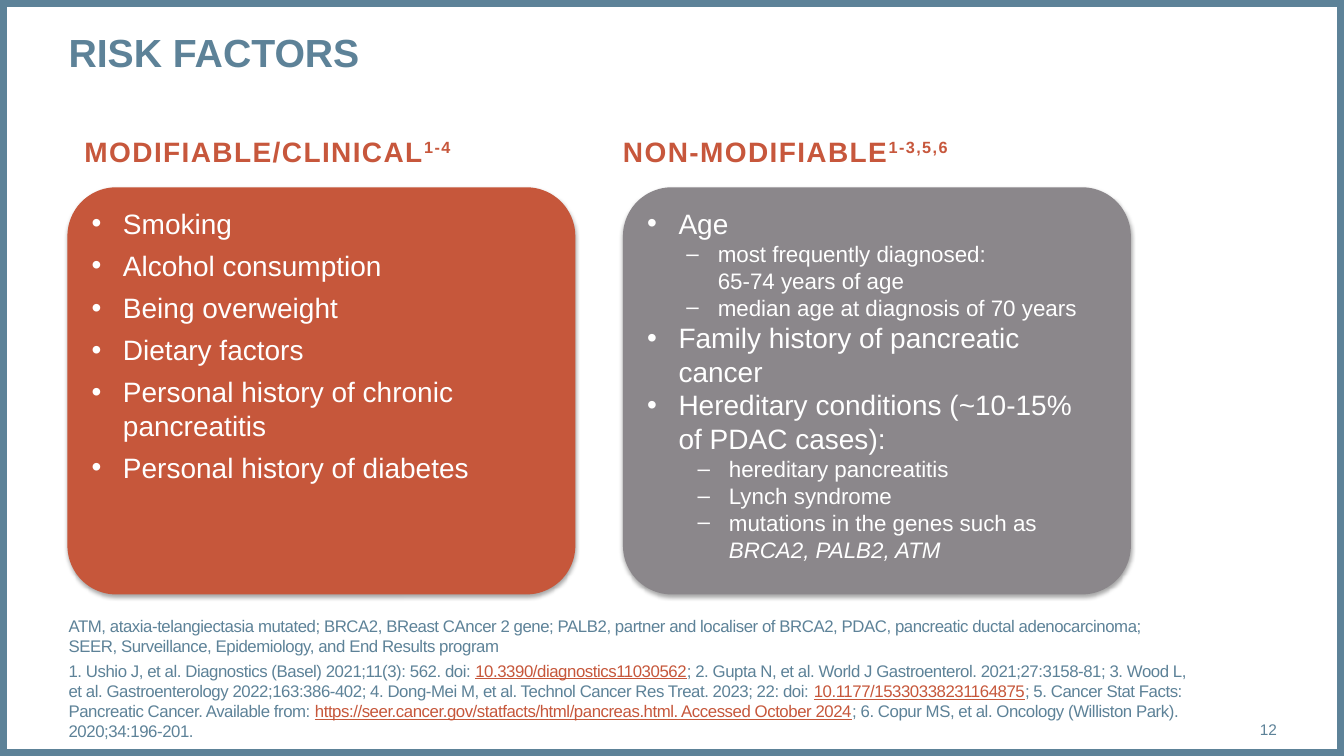
from dataclasses import dataclass, field

from lxml.etree import SubElement
from pptx import Presentation
from pptx.dml.color import RGBColor
from pptx.enum.shapes import MSO_SHAPE as Preset
from pptx.enum.text import MSO_ANCHOR as Anchor, PP_ALIGN as Align
from pptx.oxml.ns import qn
from pptx.util import Cm, Pt

COLORS = {
    "blue": "5D8298",
    "heading": "C7573C",
    "red": "C6573B",
    "grey": "8B878B",
    "white": "FFFFFF",
    "black": "000000",
}
FONT = "Arial"
HANGING = 0.79
BASE_INDENT, AGE_INDENT, GENE_INDENT = 0.79, 1.78, 2.06
CARD_TOP, CARD_WIDTH, CARD_HEIGHT = 4.72, 12.8, 10.26


@dataclass
class Span:
    text: str
    color: str = "blue"
    size: float = 12
    font: dict = field(default_factory=dict)
    attributes: dict = field(default_factory=dict)


@dataclass
class Para:
    spans: list
    format: dict = field(default_factory=dict)
    bullet: str = ""
    indent: float = 0


@dataclass
class TextBox:
    left: float
    top: float
    width: float
    height: float
    paras: list
    anchor: Anchor = Anchor.TOP


@dataclass
class Card:
    left: float
    color: str
    paras: list


def rgb(name: str) -> RGBColor:
    return RGBColor.from_string(COLORS[name])


def add_span(paragraph, span: Span) -> None:
    for index, line in enumerate(span.text.split("\n")):
        if index:
            paragraph.add_line_break()
        run = paragraph.add_run()
        run.text = line
        settings = {"name": FONT, "size": Pt(span.size), **span.font}
        for name, value in settings.items():
            setattr(run.font, name, value)
        run.font.color.rgb = rgb(span.color)
        for name, value in span.attributes.items():
            run._r.get_or_add_rPr().set(name, value)


def add_bullet(paragraph, para: Para) -> None:
    properties = paragraph._p.get_or_add_pPr()
    properties.set("marL", str(Cm(para.indent)))
    properties.set("indent", str(-Cm(HANGING)))
    color = SubElement(properties, qn("a:buClr"))
    SubElement(color, qn("a:srgbClr"), val=COLORS["white"])
    SubElement(properties, qn("a:buFont"), typeface=FONT)
    SubElement(properties, qn("a:buChar"), char=para.bullet)


def fill_text(frame, paras: list) -> None:
    frame.word_wrap = True
    for index, para in enumerate(paras):
        paragraph = frame.add_paragraph() if index else frame.paragraphs[0]
        for name, value in {"alignment": Align.LEFT, **para.format}.items():
            setattr(paragraph, name, value)
        if para.bullet:
            add_bullet(paragraph, para)
        for span in para.spans:
            add_span(paragraph, span)


def add_text(page, box: TextBox) -> None:
    shape = page.shapes.add_textbox(Cm(box.left), Cm(box.top), Cm(box.width), Cm(box.height))
    frame = shape.text_frame
    for side in ("left", "top", "right", "bottom"):
        setattr(frame, f"margin_{side}", 0)
    frame.vertical_anchor = box.anchor
    fill_text(frame, box.paras)


def add_shadow(shape) -> None:
    """Give the shape a soft shadow straight below it."""
    shape.shadow.inherit = False
    effects = shape._element.spPr.find(qn("a:effectLst"))
    shadow = SubElement(effects, qn("a:outerShdw"), blurRad=str(Pt(3.1)), dist=str(Pt(1.8)),
                        dir="5400000", rotWithShape="0")
    color = SubElement(shadow, qn("a:srgbClr"), val=COLORS["black"])
    SubElement(color, qn("a:alpha"), val="35000")


def add_card(page, card: Card) -> None:
    shape = page.shapes.add_shape(Preset.ROUNDED_RECTANGLE, Cm(card.left), Cm(CARD_TOP),
                                  Cm(CARD_WIDTH), Cm(CARD_HEIGHT))
    shape.adjustments[0] = 0.12
    shape.fill.solid()
    shape.fill.fore_color.rgb = rgb(card.color)
    shape.line.fill.background()
    add_shadow(shape)
    shape.text_frame.vertical_anchor = Anchor.TOP
    fill_text(shape.text_frame, card.paras)


def add_border(page, width: int, height: int) -> None:
    border = page.shapes.add_shape(Preset.RECTANGLE, 0, 0, width, height)
    border.shadow.inherit = False
    border.fill.background()
    border.line.color.rgb = rgb("blue")
    border.line.width = Pt(10)


def heading(text: str, references: str) -> Para:
    style = {"color": "heading", "size": 20, "font": {"bold": True}}
    return Para([Span(text, attributes={"spc": "100"}, **style),
                 Span(references, attributes={"spc": "100", "baseline": "30000"}, **style)])


def item(text: str, space_after: float = 0) -> Para:
    return Para([Span(text, "white", 20)], {"space_after": Pt(space_after)}, "•", BASE_INDENT)


def subitem(text: str, indent: float, italic: str = "") -> Para:
    spans = [Span(text, "white", 16)]
    if italic:
        spans.append(Span(italic, "white", 16, {"italic": True}))
    return Para(spans, {"level": 1}, "–", indent)


def note(text: str) -> Span:
    return Span(text, attributes={"spc": "-30"})


def reference(text: str) -> Span:
    return Span(text, "red", font={"underline": True}, attributes={"spc": "-30"})


MODIFIABLE = ["Smoking", "Alcohol consumption", "Being overweight", "Dietary factors",
              "Personal history of chronic pancreatitis", "Personal history of diabetes"]
NON_MODIFIABLE = [
    item("Age"),
    subitem("most frequently diagnosed: \n65-74 years of age", AGE_INDENT),
    subitem("median age at diagnosis of 70 years", AGE_INDENT),
    item("Family history of pancreatic cancer"),
    item("Hereditary conditions (~10-15% \nof PDAC cases):"),
    subitem("hereditary pancreatitis", GENE_INDENT),
    subitem("Lynch syndrome", GENE_INDENT),
    subitem("mutations in the genes such as ", GENE_INDENT, "BRCA2, PALB2, ATM"),
]
CARDS = [Card(1.7, "red", [item(text, 6) for text in MODIFIABLE]),
         Card(15.7, "grey", NON_MODIFIABLE)]
FOOTNOTES = [
    Para([note("ATM, ataxia-telangiectasia mutated; BRCA2, BReast CAncer 2 gene; PALB2, partner and "
               "localiser of BRCA2, PDAC, pancreatic ductal adenocarcinoma; SEER, Surveillance, "
               "Epidemiology, and End Results program")]),
    Para([note("1. Ushio J, et al. Diagnostics (Basel) 2021;11(3): 562. doi: "),
          reference("10.3390/diagnostics11030562"),
          note("; 2. Gupta N, et al. World J Gastroenterol. 2021;27:3158-81; 3. Wood L, et al. "
               "Gastroenterology 2022;163:386-402; 4. Dong-Mei M, et al. Technol Cancer Res Treat. "
               "2023; 22: doi: "),
          reference("10.1177/15330338231164875"),
          note("; 5. Cancer Stat Facts: Pancreatic Cancer. Available from: "),
          reference("https://seer.cancer.gov/statfacts/html/pancreas.html. Accessed October 2024"),
          note("; 6. Copur MS, et al. Oncology (Williston Park). 2020;34:196-201.")],
         {"space_before": Pt(3)}),
]
TEXTS = [
    TextBox(1.73, 0.71, 30.45, 2.39, [Para([Span("RISK FACTORS", size=28, font={"bold": True})])]),
    TextBox(2.13, 3.38, 10.24, 1.96, [heading("MODIFIABLE/CLINICAL", "1-4")]),
    TextBox(15.7, 3.38, 9.04, 1.96, [heading("NON-MODIFIABLE", "1-3,5,6")]),
    TextBox(1.73, 17.65, 28.27, 1.02, FOOTNOTES, Anchor.BOTTOM),
    TextBox(30, 17.86, 2.18, 1.02, [Para([Span("12", size=11)], {"alignment": Align.RIGHT})],
            Anchor.MIDDLE),
]


def main() -> None:
    deck = Presentation()
    deck.slide_width, deck.slide_height = Cm(33.87), Cm(19.05)
    page = deck.slides.add_slide(deck.slide_layouts[6])
    add_border(page, deck.slide_width, deck.slide_height)
    for card in CARDS:
        add_card(page, card)
    for box in TEXTS:
        add_text(page, box)
    deck.save("out.pptx")


if __name__ == "__main__":
    main()
